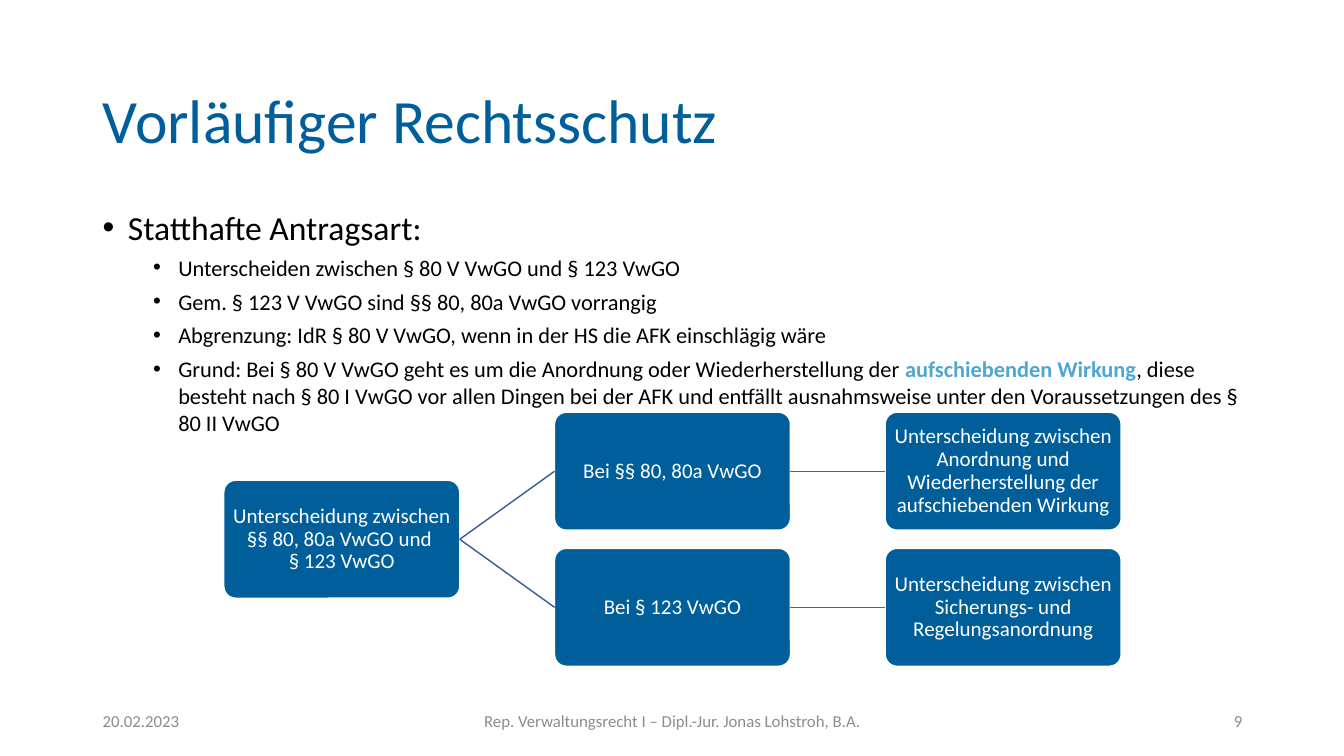
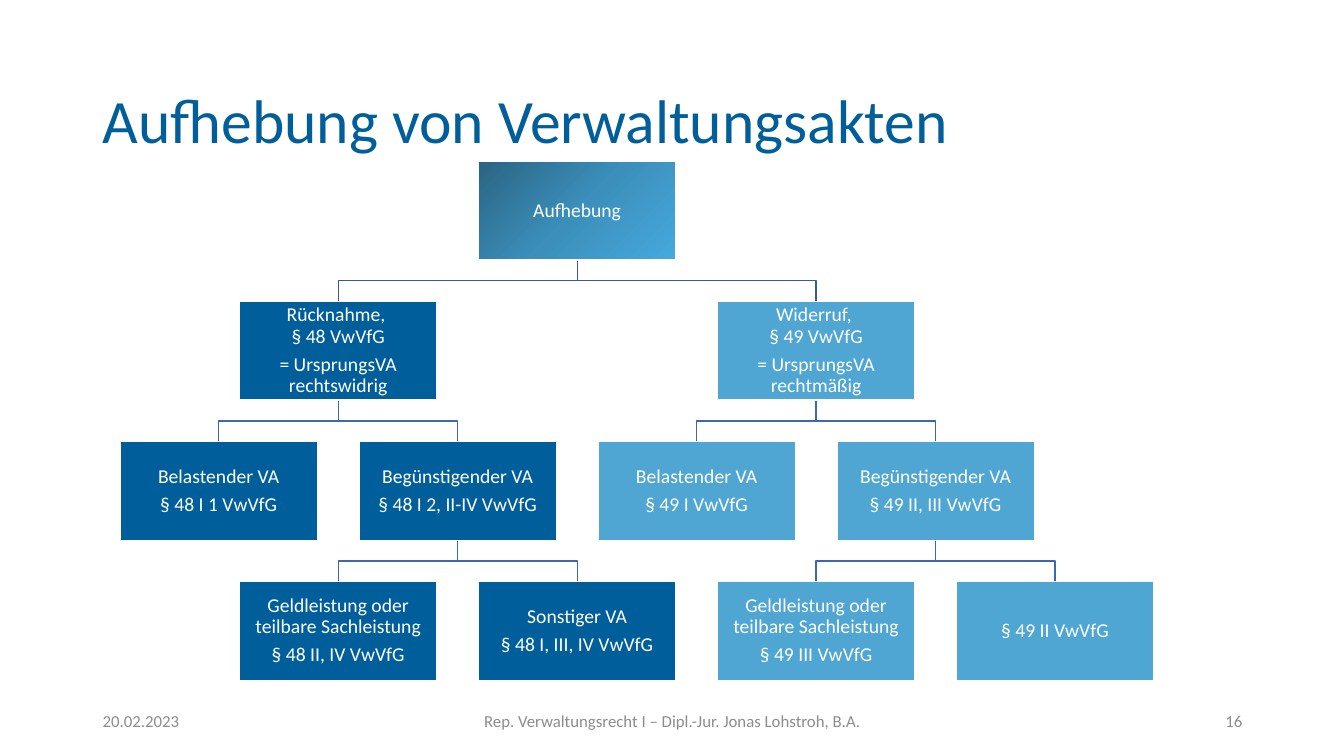
from copy import deepcopy

from lxml import etree
from pptx import Presentation
from pptx.dml.color import RGBColor
from pptx.enum import shapes, text
from pptx.oxml.ns import qn
from pptx.util import Inches, Pt

HUES = {
    "navy": "005F9B", "sky": "50A6D3", "white": "FFFFFF", "black": "000000",
    "grey": "8C8C8C", "link": "365B9D", "fine": "3E67B2",
}
FADE = ((0, "2A6483"), (0.5, "3B8FBA"), (1, "46A9DD"))
FONT = "Calibri"
LEFT, MID, RIGHT = text.PP_ALIGN.LEFT, text.PP_ALIGN.CENTER, text.PP_ALIGN.RIGHT
DATE = "20.02.2023"
NOTE = "Rep. Verwaltungsrecht I – Dipl.-Jur. Jonas Lohstroh, B.A."

POINTS = (
    ("Unterscheiden zwischen § 80 V VwGO und § 123 VwGO",),
    ("Gem. § 123 V VwGO sind §§ 80, 80a VwGO vorrangig",),
    ("Abgrenzung: IdR § 80 V VwGO, wenn in der HS die AFK einschlägig wäre",),
    ("Grund: Bei § 80 V VwGO geht es um die Anordnung oder Wiederherstellung der ",
     "aufschiebenden Wirkung",
     ", diese besteht nach § 80 I VwGO vor allen Dingen bei der AFK und entfällt "
     "ausnahmsweise unter den Voraussetzungen des § 80 II VwGO"),
)

START = "Unterscheidung zwischen §§ 80, 80a VwGO und \v§ 123 VwGO"
PATHS = (
    ("Bei §§ 80, 80a VwGO",
     "Unterscheidung zwischen Anordnung und Wiederherstellung der "
     "aufschiebenden Wirkung"),
    ("Bei § 123 VwGO",
     "Unterscheidung zwischen Sicherungs- und Regelungsanordnung"),
)

# Each node: text, tone, column in half steps, children
GRANT = "Geldleistung oder teilbare Sachleistung\n"
TREE = ("Aufhebung", "fade", 3, (
    ("Rücknahme, \v§ 48 VwVfG\n= UrsprungsVA rechtswidrig", "navy", 1, (
        ("Belastender VA\n§ 48 I 1 VwVfG", "navy", 0, ()),
        ("Begünstigender VA\n§ 48 I 2, II-IV VwVfG", "navy", 2, (
            (GRANT + "§ 48 II, IV VwVfG", "navy", 1, ()),
            ("Sonstiger VA\n§ 48 I, III, IV VwVfG", "navy", 3, ()),
        )),
    )),
    ("Widerruf, \v§ 49 VwVfG\n= UrsprungsVA rechtmäßig", "sky", 5, (
        ("Belastender VA\n§ 49 I VwVfG", "sky", 4, ()),
        ("Begünstigender VA\n§ 49 II, III VwVfG", "sky", 6, (
            (GRANT + "§ 49 III VwVfG", "sky", 5, ()),
            ("§ 49 II VwVfG", "sky", 7, ()),
        )),
    )),
))


def hue(name):
    return RGBColor.from_string(HUES[name])


def style(run, size, tone, bold=False):
    run.font.name, run.font.size, run.font.bold = FONT, Pt(size), bold
    run.font.color.rgb = hue(tone)


def label(slide, box, words, size, tone, align=LEFT, lead=1.0):
    """One line of text, centred vertically in its box."""
    frame = slide.shapes.add_textbox(*map(Inches, box)).text_frame
    frame.word_wrap = True
    frame.vertical_anchor = text.MSO_ANCHOR.MIDDLE
    frame.text = words
    para = frame.paragraphs[0]
    para.alignment, para.line_spacing = align, lead
    style(para.runs[0], size, tone)


def page(deck, title, num):
    """Blank slide with the shared title and footer."""
    slide = deck.slides.add_slide(deck.slide_layouts[6])
    label(slide, (0.92, 0.61, 11.5, 1.23), title, 44, "navy", lead=0.9)
    for left, wide, words, align in (
            (0.92, 3, DATE, LEFT), (4.42, 4.5, NOTE, MID), (9.42, 3, num, RIGHT)):
        label(slide, (left, 6.95, wide, 0.4), words, 12, "grey", align)
    return slide


def bullet(para, parts, size, gap, left):
    """Bulleted paragraph; every second part is emphasised."""
    para.space_before = Pt(gap)
    for i, part in enumerate(parts):
        run = para.add_run()
        run.text = part
        style(run, size, "sky" if i % 2 else "black", bool(i % 2))
    props = para._p.get_or_add_pPr()
    props.set("marL", str(Inches(left)))
    props.set("indent", str(Inches(-0.25)))
    etree.SubElement(props, qn("a:buFont")).set("typeface", "Arial")
    etree.SubElement(props, qn("a:buChar")).set("char", "•")


def body(slide, box, head, points):
    frame = slide.shapes.add_textbox(*map(Inches, box)).text_frame
    frame.word_wrap = True
    bullet(frame.paragraphs[0], (head,), 24, 10, 0.25)
    for parts in points:
        bullet(frame.add_paragraph(), parts, 16, 5, 0.75)


def shade(fill):
    """Diagonal three-stop gradient."""
    fill.gradient()
    fill.gradient_angle = 315


def node(slide, kind, box, words, size, tone):
    """Filled box with centred white text."""
    shape = slide.shapes.add_shape(kind, *map(Inches, box))
    shape.shadow.inherit = False
    if tone == "fade":
        shade(shape.fill)
        stops = shape._element.spPr.find(".//" + qn("a:gsLst"))
        stops.append(deepcopy(stops[0]))
        for stop, (pos, code) in zip(shape.fill.gradient_stops, FADE):
            stop.position = pos
            stop.color.rgb = RGBColor.from_string(code)
    else:
        shape.fill.solid()
        shape.fill.fore_color.rgb = hue(tone)
    shape.line.color.rgb, shape.line.width = hue("white"), Pt(1)
    frame = shape.text_frame
    frame.word_wrap = True
    frame.vertical_anchor = text.MSO_ANCHOR.MIDDLE
    frame.margin_left = frame.margin_right = Inches(0.01)
    frame.margin_top = frame.margin_bottom = Inches(0.01)
    frame.text = words
    for para in frame.paragraphs:
        para.alignment, para.line_spacing = MID, 0.9
        if para is not frame.paragraphs[-1]:
            para.space_after = Pt(size * 0.35)
        for run in para.runs:
            style(run, size, "white")
    return shape


def join(slide, one, two, tone):
    """Straight line from the right side of one box to the left of the next."""
    line = slide.shapes.add_connector(shapes.MSO_CONNECTOR.STRAIGHT, 0, 0, 0, 0)
    line.begin_connect(one, 3)
    line.end_connect(two, 1)
    line.line.color.rgb, line.line.width = hue(tone), Pt(1)
    etree.SubElement(line._element.spPr, qn("a:effectLst"))


def flow(slide, left, top):
    """Left-to-right diagram: one start, then a row for each path."""
    wide, high, gap, step = 2.34, 1.17, 0.94, 1.35

    def cell(col, row, words):
        spot = (left + col * (wide + gap), top + row * step, wide, high)
        shape = node(slide, shapes.MSO_SHAPE.ROUNDED_RECTANGLE, spot,
                     words, 15, "navy")
        shape.adjustments[0] = 0.1
        return shape

    first = cell(0, (len(PATHS) - 1) / 2, START)
    for row, (case, result) in enumerate(PATHS):
        second, third = cell(1, row, case), cell(2, row, result)
        join(slide, first, second, "link")
        join(slide, second, third, "fine")


def elbow(slide, start, end, tone):
    """Open line: down, across, down."""
    (x1, y1), (x2, y2) = start, end
    half = (y1 + y2) / 2
    pts = [(Inches(x), Inches(y))
           for x, y in ((x1, y1), (x1, half), (x2, half), (x2, y2))]
    path = slide.shapes.build_freeform(*pts[0])
    path.add_line_segments(pts[1:], close=False)
    line = path.convert_to_shape()
    line.shadow.inherit = False
    line.fill.background()
    line.line.color.rgb, line.line.width = hue(tone), Pt(1)


def tree(slide, left, top, item, row=0):
    """Top-down chart; draws a node, then its branches."""
    wide, high, gap = 1.96, 0.98, 0.41

    def spot(col, level):
        return left + col * (wide + gap) / 2, top + level * (high + gap)

    words, tone, col, kids = item
    x, y = spot(col, row)
    for kid in kids:
        kx, ky = spot(kid[2], row + 1)
        elbow(slide, (x + wide / 2, y + high), (kx + wide / 2, ky),
              "fine" if row else "link")
        tree(slide, left, top, kid, row + 1)
    node(slide, shapes.MSO_SHAPE.RECTANGLE, (x, y, wide, high), words, 14, tone)


def main():
    deck = Presentation()
    deck.slide_width, deck.slide_height = Inches(13.33), Inches(7.5)

    # Interim relief
    slide = page(deck, "Vorläufiger Rechtsschutz", "9")
    body(slide, (0.92, 2, 11.5, 4.76), "Statthafte Antragsart:", POINTS)
    flow(slide, 2.22, 4.09)

    # Revocation of administrative acts
    slide = page(deck, "Aufhebung von Verwaltungsakten", "16")
    tree(slide, 1.19, 1.6, TREE)

    deck.save("out.pptx")


if __name__ == "__main__":
    main()
